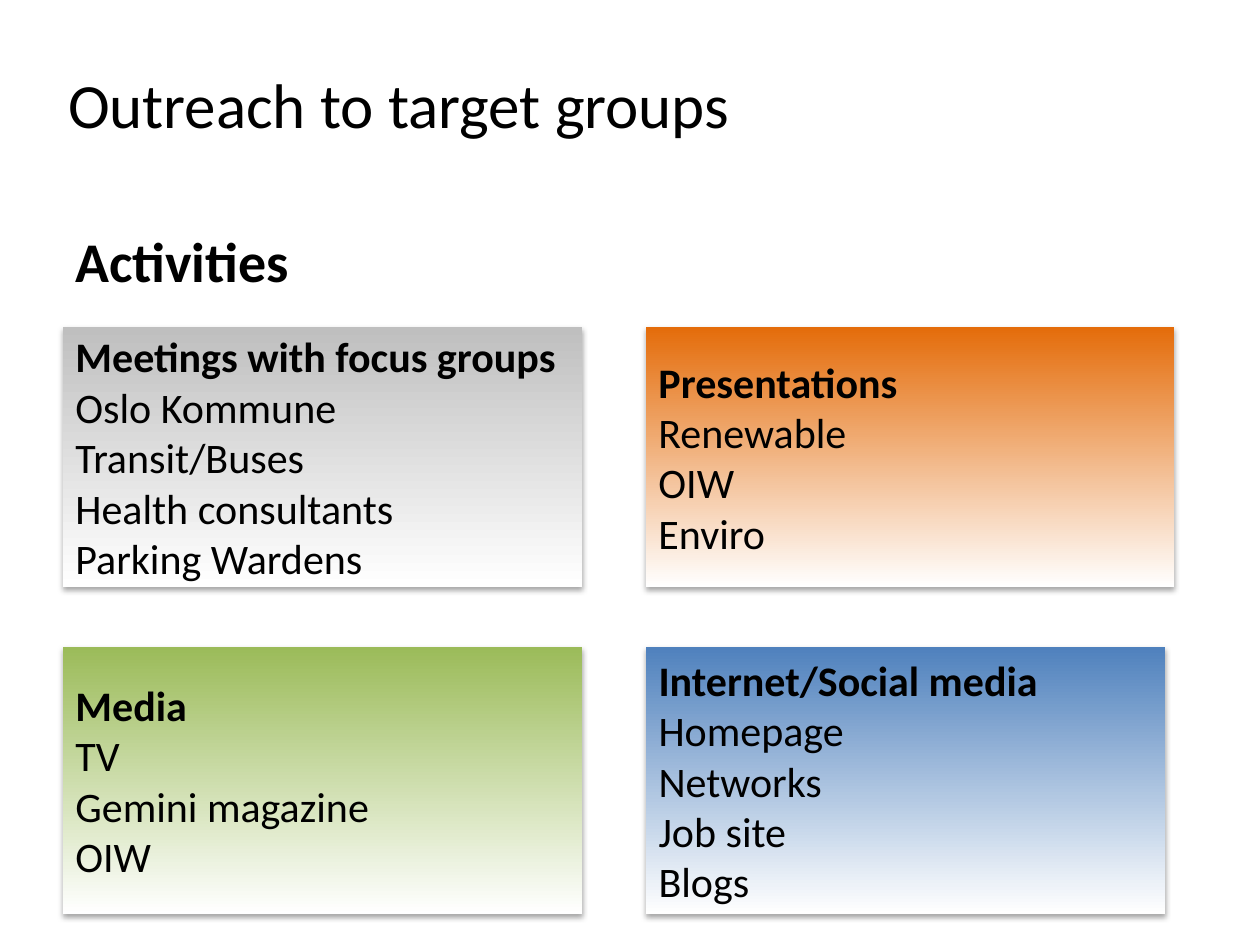
from lxml.etree import SubElement
from pptx import Presentation
from pptx.dml.color import RGBColor
from pptx.enum.shapes import MSO_SHAPE
from pptx.enum.text import MSO_ANCHOR, PP_ALIGN
from pptx.oxml.ns import qn
from pptx.util import Pt

TITLE = "Outreach to target groups"
HEADING = "Activities"
CARDS = [
    ("Meetings with focus groups", "BFBFBF",
     ["Oslo Kommune", "Transit/Buses", "Health consultants",
      "Parking Wardens"]),
    ("Presentations", "E46C0A", ["Renewable", "OIW", "Enviro"]),
    ("Media", "9BBB59", ["TV", "Gemini magazine", "OIW"]),
    ("Internet/Social media", "4F81BD",
     ["Homepage", "Networks", "Job site", "Blogs"]),
]
THEME = {"font": "Calibri", "ink": "000000", "fade": "FFFFFF",
         "title": 36, "heading": 32, "body": 24}
COLS = [36, 369.2]
ROWS = [(186.6, 149), (369.6, 152.6)]
WIDTH, WIDE = 296.6, 301.6


def write(frame, lines, size, bold):
    """Fill a frame with left-aligned lines, the first one bold on request."""
    frame.word_wrap = True
    frame.text = "\n".join(lines)
    for rank, para in enumerate(frame.paragraphs):
        para.alignment = PP_ALIGN.LEFT
        for run in para.runs:
            font = run.font
            font.name, font.size = THEME["font"], Pt(size)
            font.bold = bold and rank == 0
            font.color.rgb = RGBColor.from_string(THEME["ink"])


def shade(shape):
    """Give a shape a soft shadow below."""
    shape.shadow.inherit = False
    effects = shape._element.spPr.find(qn("a:effectLst"))
    shadow = SubElement(effects, qn("a:outerShdw"), blurRad=str(Pt(3.1)),
                        dist=str(Pt(1.8)), dir="5400000", rotWithShape="0")
    color = SubElement(shadow, qn("a:srgbClr"), val=THEME["ink"])
    SubElement(color, qn("a:alpha"), val="35000")


def add_card(slide, box, head, color, items):
    """Draw one gradient card with a bold head and its items."""
    card = slide.shapes.add_shape(MSO_SHAPE.RECTANGLE, *map(Pt, box))
    card.fill.gradient()
    card.fill.gradient_angle = 270
    for stop, tone in zip(card.fill.gradient_stops, (color, THEME["fade"])):
        stop.color.rgb = RGBColor.from_string(tone)
    card.line.fill.background()
    shade(card)
    card.text_frame.vertical_anchor = MSO_ANCHOR.MIDDLE
    write(card.text_frame, [head, *items], THEME["body"], True)


def main():
    """Build and save the slide."""
    deck = Presentation()
    deck.slide_width, deck.slide_height = Pt(720), Pt(540)
    slide = deck.slides.add_slide(deck.slide_layouts[6])

    title = slide.shapes.add_textbox(Pt(36), Pt(21.6), Pt(514), Pt(74.9))
    frame = title.text_frame
    frame.margin_left = frame.margin_right = Pt(2.9)
    frame.vertical_anchor = MSO_ANCHOR.MIDDLE
    write(frame, [TITLE], THEME["title"], False)

    heading = slide.shapes.add_textbox(Pt(36), Pt(126), Pt(648), Pt(46))
    write(heading.text_frame, [HEADING], THEME["heading"], True)

    for rank, (head, color, items) in enumerate(CARDS):
        row, col = divmod(rank, len(COLS))
        top, height = ROWS[row]
        width = WIDE if (row, col) == (0, 1) else WIDTH
        add_card(slide, (COLS[col], top, width, height), head, color, items)

    deck.save("out.pptx")


if __name__ == "__main__":
    main()
